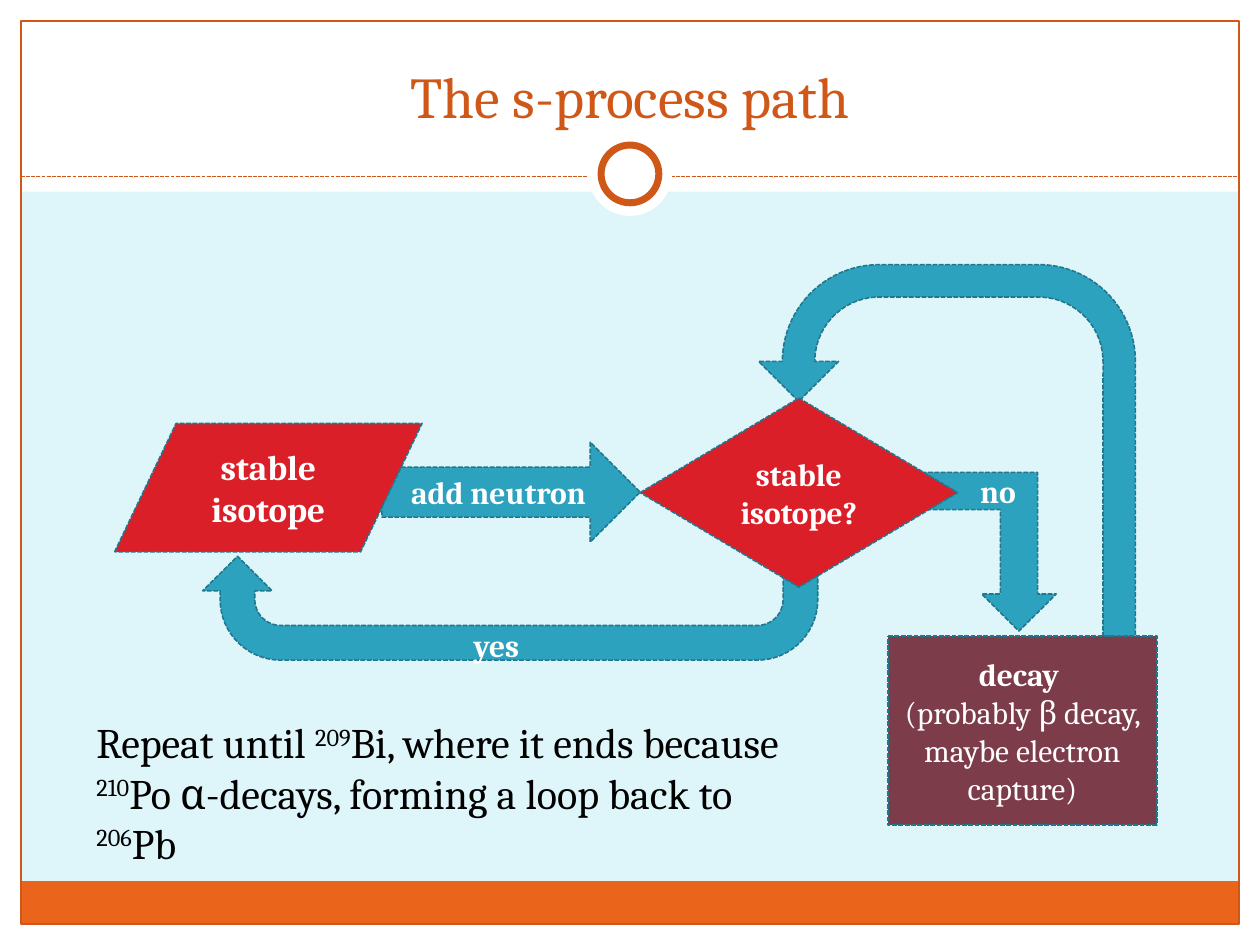
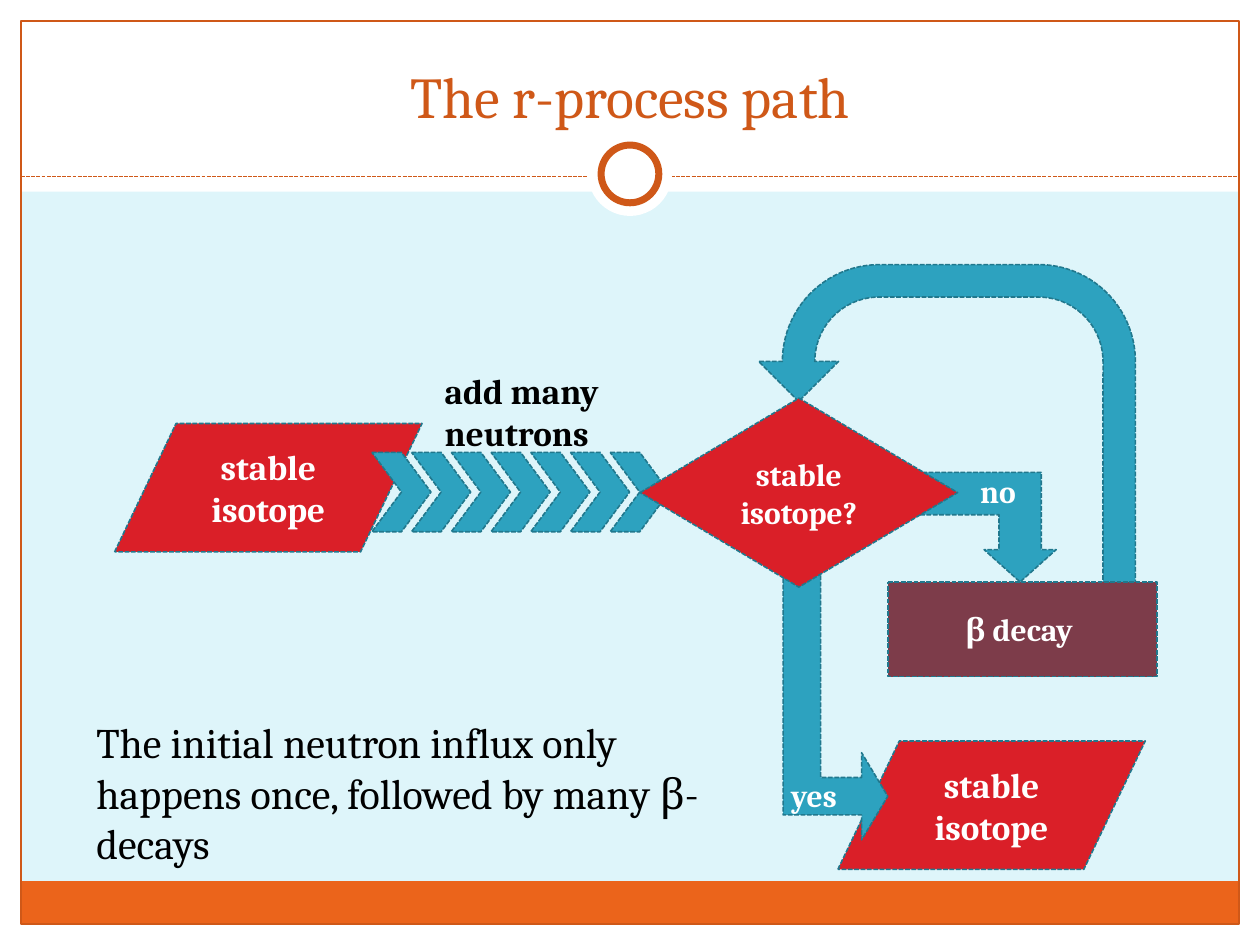
from collections import namedtuple

from lxml.etree import SubElement
from pptx import Presentation
from pptx.dml.color import RGBColor
from pptx.enum.dml import MSO_LINE
from pptx.enum.shapes import MSO_CONNECTOR, MSO_SHAPE
from pptx.enum.text import MSO_ANCHOR, MSO_AUTO_SIZE, PP_ALIGN
from pptx.oxml.ns import qn
from pptx.util import Pt

COLORS = {
    "background": "DEF5FA",
    "white": "FFFFFF",
    "black": "000000",
    "band": "EB641B",
    "accent": "CF5818",
    "arrow": "2DA2BF",
    "outline": "21788D",
    "isotope": "DA1F28",
    "decay": "7D3C4A",
}
FONT = "Cambria"
MARGIN = 12

Box = namedtuple("Box", "left top width height")
PAGE = Box(0, 0, 720, 540)
FLOW = Box(65.5, 151.2, 595.5, 345.5)
CAPTION = Box(48, 406, 408, 94.5)


def rgb(name):
    return RGBColor.from_string(COLORS[name])


def inside(box, left, top, width, height):
    return Box(box.left + left, box.top + top, width, height)


def in_points(box):
    return [Pt(value) for value in box]


def write(frame, spans, size=18, color="white", bold=False, align=PP_ALIGN.LEFT,
          anchor=MSO_ANCHOR.TOP):
    """Fill a text frame; a span is a string or a (string, settings) pair."""
    frame.word_wrap = True
    frame.vertical_anchor = anchor
    para = frame.paragraphs[0]
    para.alignment = align
    for span in [spans] if isinstance(spans, str) else spans:
        words, settings = (span, {}) if isinstance(span, str) else span
        if words == "\n":
            para.add_line_break()
            continue
        run = para.add_run()
        run.text = words
        run.font.name = FONT
        run.font.size = Pt(size)
        run.font.bold = settings.get("bold", bold)
        run.font.color.rgb = rgb(color)
        if settings.get("raised"):
            run.font._element.set("baseline", "30000")


def add_label(page, box, spans, **text_format):
    label = page.shapes.add_textbox(*in_points(box))
    write(label.text_frame, spans, **text_format)
    label.text_frame.auto_size = MSO_AUTO_SIZE.SHAPE_TO_FIT_TEXT


def add_figure(page, kind, box, fill=None, line=None, width=0.75, dash=None):
    shape = page.shapes.add_shape(kind, *in_points(box))
    shape.shadow.inherit = False
    if fill:
        shape.fill.solid()
        shape.fill.fore_color.rgb = rgb(fill)
    else:
        shape.fill.background()
    if line:
        shape.line.color.rgb = rgb(line)
        shape.line.width = Pt(width)
        shape.line.dash_style = dash
    else:
        shape.line.fill.background()
    return shape


def add_block(page, kind, box, fill, spans=None, size=18, bold=True):
    """A dashed flowchart part with centred white text."""
    block = add_figure(page, kind, box, fill, "outline", 0.9, MSO_LINE.SQUARE_DOT)
    if spans:
        write(block.text_frame, spans, size=size, bold=bold,
              align=PP_ALIGN.CENTER, anchor=MSO_ANCHOR.MIDDLE)
    return block


def add_arrow(page, kind, box, spans=None, rotation=0, flip=False, bends=()):
    arrow = add_block(page, kind, box, "arrow", spans)
    arrow.rotation = rotation
    if flip:
        arrow._element.spPr.xfrm.set("flipV", "1")
    for index, bend in enumerate(bends):
        arrow.adjustments[index] = bend


# Shared frame of every page

def draw_frame(page, box):
    right, bottom = box.width - MARGIN, box.height - MARGIN
    inner = box.width - 2 * MARGIN
    rectangle = MSO_SHAPE.RECTANGLE
    for border in (
        (0, bottom, box.width, MARGIN),
        (0, 0, box.width, 109.5),
        (0, 0, MARGIN, box.height),
        (right, 0, MARGIN, box.height),
    ):
        add_figure(page, rectangle, inside(box, *border), "white")
    add_figure(page, rectangle, inside(box, MARGIN, bottom - 24.5, inner, 24.5), "band")
    add_figure(page, rectangle, inside(box, MARGIN, MARGIN, inner, bottom - MARGIN),
               line="accent")

    rule_y = box.top + 100.8
    rule = page.shapes.add_connector(
        MSO_CONNECTOR.STRAIGHT, Pt(box.left + MARGIN), Pt(rule_y),
        Pt(box.left + right), Pt(rule_y))
    rule.line.color.rgb = rgb("accent")
    rule.line.width = Pt(0.75)
    rule.line.dash_style = MSO_LINE.SQUARE_DOT
    SubElement(rule._element.spPr, qn("a:effectLst"))

    # Ring over the rule
    for diameter, line in ((48, None), (33, "accent")):
        ring = inside(box, (box.width - diameter) / 2, 99.4 - diameter / 2,
                      diameter, diameter)
        add_figure(page, MSO_SHAPE.OVAL, ring, "white", line, 4)


def move_to_master(page, master):
    tree = master.shapes._spTree
    for number, shape in enumerate(list(page.shapes), start=100):
        if not shape.is_placeholder:
            shape._element.xpath(".//p:cNvPr")[0].set("id", str(number))
            tree.append(shape._element)


def set_title(page, words):
    title = page.shapes.title
    title.left, title.top, title.width, title.height = in_points(Box(24, 18, 672, 60))
    write(title.text_frame, words, size=33, color="accent",
          align=PP_ALIGN.CENTER, anchor=MSO_ANCHOR.BOTTOM)


# Flowchart parts that both processes use

def stable_isotope(page, box, left, top):
    add_block(page, MSO_SHAPE.FLOWCHART_DATA, inside(box, left, top, 175.7, 73.4),
              "isotope", "stable isotope", size=20)


def stability_question(page, box):
    add_block(page, MSO_SHAPE.FLOWCHART_DECISION,
              inside(box, 300.3, 76.3, 181.4, 108), "isotope", "stable isotope?")


def decay_loop(page, box, drop, decay_top, decay_height, spans, bends=()):
    add_arrow(page, MSO_SHAPE.U_TURN_ARROW, inside(box, 368, 0, 215.3, 215.3),
              rotation=180, flip=True, bends=(0.086, 0.106, 0.106, 0.438, 0.363))
    add_arrow(page, MSO_SHAPE.BENT_UP_ARROW, inside(box, 453, 118.8, 85, drop),
              flip=True, bends=bends)
    add_label(page, inside(box, 487.5, 115.2, 57, 29), "no", bold=True)
    add_block(page, MSO_SHAPE.FLOWCHART_PROCESS,
              inside(box, 442, decay_top, 153.5, decay_height), "decay", spans)


# Flowcharts

def s_process(page, box):
    decay_loop(page, box, 90.7, 212.4, 108, [
        "decay ", "\n",
        ("(probably β decay, maybe electron capture)", {"bold": False})])
    add_arrow(page, MSO_SHAPE.U_TURN_ARROW, inside(box, 50.4, 146.8, 351.4, 79.2),
              rotation=180)
    add_arrow(page, MSO_SHAPE.RIGHT_ARROW, inside(box, 152.7, 101.5, 147.6, 57),
              "add neutron")
    stable_isotope(page, box, 0, 90.8)
    stability_question(page, box)
    add_label(page, inside(box, 198, 203, 57, 29), "yes", bold=True)


def r_process(page, box):
    decay_loop(page, box, 62.6, 181.4, 54, "β decay ", bends=(0.386, 0.329, 0.295))
    stable_isotope(page, box, 0, 90.8)

    # Neutron influx
    for step in range(7):
        add_arrow(page, MSO_SHAPE.CHEVRON,
                  inside(box, 147 + 22.7 * step, 107.3, 33.8, 45.4))
    add_label(page, inside(box, 181.5, 56.2, 118.8, 55.4), "add many neutrons",
              size=20, color="black", bold=True)

    # Way out to the final isotope
    stable_isotope(page, box, 413.3, 272.2)
    add_arrow(page, MSO_SHAPE.BENT_UP_ARROW, inside(box, 332.7, 219.6, 158.4, 59.8),
              rotation=90, bends=(0.358, 0.416, 0.25))
    add_label(page, inside(box, 379.5, 288.7, 57, 29), "yes", bold=True)
    stability_question(page, box)


def main():
    deck = Presentation()
    deck.slide_width, deck.slide_height = Pt(PAGE.width), Pt(PAGE.height)
    master = deck.slide_master
    master.background.fill.solid()
    master.background.fill.fore_color.rgb = rgb("background")
    s_page, r_page = (deck.slides.add_slide(deck.slide_layouts[5]) for _ in range(2))
    draw_frame(s_page, PAGE)
    move_to_master(s_page, master)

    raised = {"raised": True}
    set_title(s_page, "The s-process path")
    s_process(s_page, FLOW)
    add_label(s_page, CAPTION, [
        "Repeat until ", ("209", raised), "Bi, where it ends because ",
        ("210", raised), "Po α-decays, forming a loop back to ",
        ("206", raised), "Pb"], size=24, color="black")

    set_title(r_page, "The r-process path")
    r_process(r_page, FLOW)
    add_label(r_page, CAPTION._replace(width=380),
              "The initial neutron influx only happens once, followed by many β-decays",
              size=24, color="black")

    deck.save("out.pptx")


if __name__ == "__main__":
    main()
